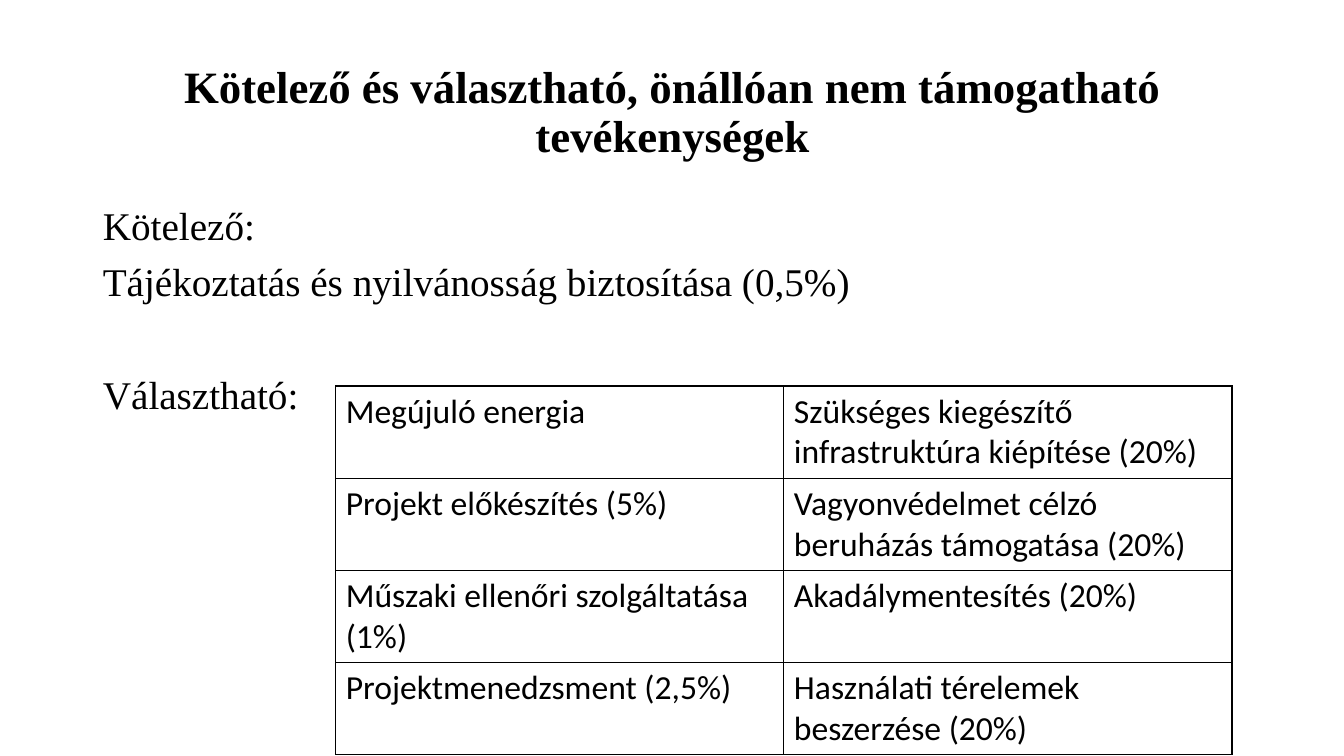
from lxml.etree import SubElement
from pptx import Presentation
from pptx.dml.color import RGBColor
from pptx.enum.text import MSO_ANCHOR, MSO_AUTO_SIZE, PP_ALIGN
from pptx.oxml.ns import qn
from pptx.util import Inches, Pt

BLACK = RGBColor(0x00, 0x00, 0x00)
HEADING_FONT = "Times New Roman"
TABLE_FONT = "Calibri"

TITLE = "Kötelező és választható, önállóan nem támogatható tevékenységek"
# Each line with the space before it, in points
BODY_LINES = [
    ("Kötelező:", 10),
    ("Tájékoztatás és nyilvánosság biztosítása (0,5%)", 10),
    ("Választható:", 50),
]
ACTIVITIES = [
    ("Megújuló energia", "Szükséges kiegészítő infrastruktúra kiépítése (20%)"),
    ("Projekt előkészítés (5%)", "Vagyonvédelmet célzó beruházás támogatása (20%)"),
    ("Műszaki ellenőri szolgáltatása (1%)", "Akadálymentesítés (20%)"),
    ("Projektmenedzsment (2,5%)", "Használati térelemek beszerzése (20%)"),
]


def place(shape, left, top, width, height):
    shape.left, shape.top = Inches(left), Inches(top)
    shape.width, shape.height = Inches(width), Inches(height)


def format_paragraph(paragraph, font_name, size, bold=False):
    font = paragraph.font
    font.name, font.size, font.bold = font_name, Pt(size), bold
    font.color.rgb = BLACK


def remove_bullet(paragraph):
    properties = paragraph._p.get_or_add_pPr()
    properties.set("marL", "0")
    properties.set("indent", "0")
    SubElement(properties, qn("a:buNone"))


def add_borders(cell):
    properties = cell._tc.get_or_add_tcPr()
    for position, side in enumerate(("lnL", "lnR", "lnT", "lnB")):
        line = SubElement(properties, qn(f"a:{side}"), w=str(Pt(1)))
        fill = SubElement(line, qn("a:solidFill"))
        SubElement(fill, qn("a:srgbClr"), val=str(BLACK))
        properties.insert(position, line)


def fill_title(slide, left, top, width, height):
    title = slide.shapes.title
    place(title, left, top, width, height)
    frame = title.text_frame
    frame.text = TITLE
    frame.auto_size = MSO_AUTO_SIZE.NONE
    frame.vertical_anchor = MSO_ANCHOR.MIDDLE
    paragraph = frame.paragraphs[0]
    paragraph.alignment = PP_ALIGN.CENTER
    paragraph.line_spacing = 0.9
    format_paragraph(paragraph, HEADING_FONT, 32, bold=True)


def fill_body(slide, left, top, width, height):
    body = slide.placeholders[1]
    place(body, left, top, width, height)
    frame = body.text_frame
    frame.text = "\n".join(text for text, _ in BODY_LINES)
    frame.auto_size = MSO_AUTO_SIZE.NONE
    for paragraph, (_, space) in zip(frame.paragraphs, BODY_LINES):
        paragraph.line_spacing = 0.9
        paragraph.space_before = Pt(space)
        remove_bullet(paragraph)
        format_paragraph(paragraph, HEADING_FONT, 28)


def add_activity_table(slide, left, top, width, height):
    table = slide.shapes.add_table(
        len(ACTIVITIES), 2, Inches(left), Inches(top), Inches(width), Inches(height)
    ).table
    table.first_row = False
    table.horz_banding = False
    for row, texts in enumerate(ACTIVITIES):
        for column, text in enumerate(texts):
            cell = table.cell(row, column)
            cell.text = text
            cell.fill.background()
            add_borders(cell)
            format_paragraph(cell.text_frame.paragraphs[0], TABLE_FONT, 24)


def main():
    presentation = Presentation()
    presentation.slide_width = Inches(13.33)
    presentation.slide_height = Inches(7.5)
    slide = presentation.slides.add_slide(presentation.slide_layouts[1])

    # Heading
    fill_title(slide, 0.92, 0.4, 11.5, 1.45)
    # Mandatory activities and the label of the optional ones
    fill_body(slide, 0.92, 2, 11.5, 4.76)
    # Optional activities
    add_activity_table(slide, 3.33, 3.83, 8.89, 3.6)

    presentation.save("out.pptx")


if __name__ == "__main__":
    main()
